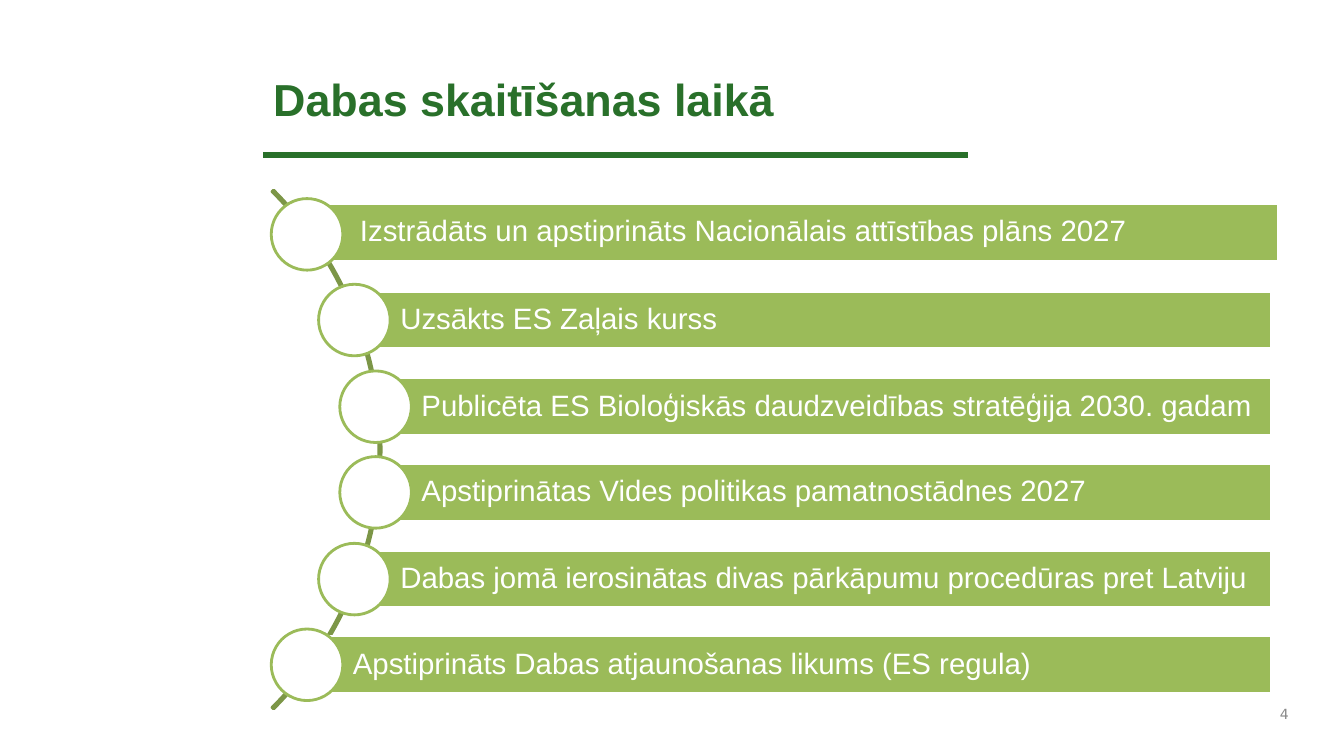
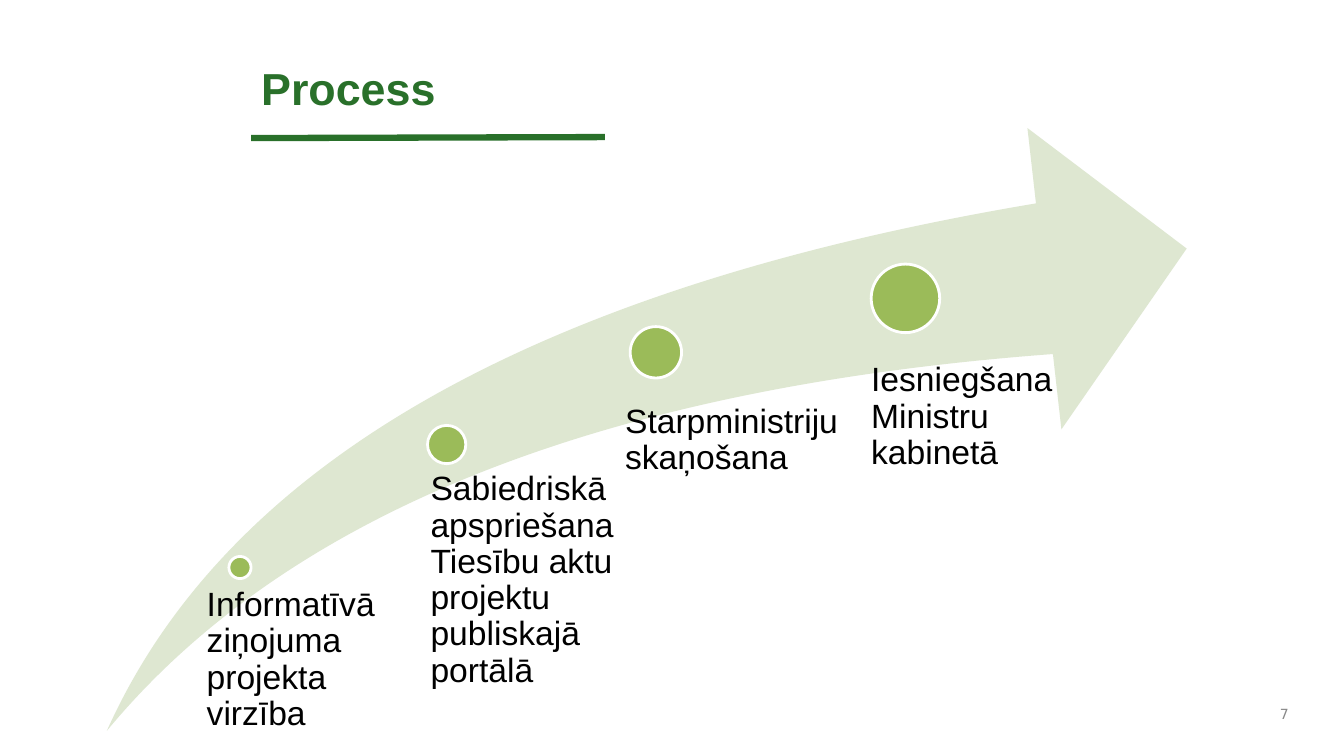
from dataclasses import dataclass
from typing import NamedTuple, Optional

from lxml import etree
from pptx import Presentation
from pptx import util as u
from pptx.dml.color import RGBColor
from pptx.enum import shapes, text
from pptx.oxml.ns import qn
from pptx.presentation import Presentation as Deck
from pptx.shapes.autoshape import Shape
from pptx.slide import Slide

PX = 9144  # EMU per px, 100 px to the inch
DARK_GREEN = "29702A"
GREEN = "9BBB59"
OLIVE = "7C9647"
PALE_GREEN = "DEE7D1"
WHITE = "FFFFFF"
BLACK = "000000"
GREY = "898989"
BODY_FONT = "Arial"
NUMBER_FONT = "DejaVu Sans"
OUTLINE = 2
TITLE_SIZE = (889, 113)
TITLE_ONLY = 5

CIRCLE = 71
CIRCLE_TOP = 197
CIRCLE_PITCH = 85.4
BAR_HEIGHT = 57
BAR_RIGHT = 1261


class Frame(NamedTuple):
    left: int
    top: int
    width: int
    height: int


class Insets(NamedTuple):
    left: int = 10
    top: int = 5
    right: int = 10
    bottom: int = 5


@dataclass(frozen=True)
class Step:
    label: str
    circle_left: int
    bar_shift: tuple[int, int] = (0, 0)


@dataclass(frozen=True)
class Stage:
    label: str
    dot_left: int
    dot_top: int
    dot_size: int
    label_frame: Frame


STEPS = [
    Step("Izstrādāts un apstiprināts Nacionālais attīstības plāns 2027", 269, (7, -2)),
    Step("Uzsākts ES Zaļais kurss", 316),
    Step("Publicēta ES Bioloģiskās daudzveidības stratēģija 2030. gadam", 337),
    Step("Apstiprinātas Vides politikas pamatnostādnes 2027", 337),
    Step("Dabas jomā ierosinātas divas pārkāpumu procedūras pret Latviju", 316),
    Step("Apstiprināts Dabas atjaunošanas likums (ES regula)", 269),
]

STAGES = [
    Stage("Informatīvā ziņojuma projekta virzība", 227, 552, 22, Frame(193, 583, 209, 142)),
    Stage("Sabiedriskā apspriešana Tiesību aktu projektu publiskajā portālā",
          424, 422, 38, Frame(407, 468, 259, 177)),
    Stage("Starpministriju skaņošana", 625, 324, 51, Frame(593, 401, 239, 150)),
    Stage("Iesniegšana Ministru kabinetā", 864, 262, 68, Frame(828, 360, 239, 89)),
]


def px(length: float) -> u.Emu:
    return u.Emu(round(length * PX))


def emu(frame: Frame) -> list[u.Emu]:
    return [px(length) for length in frame]


def color(value: str) -> RGBColor:
    return RGBColor.from_string(value)


def write(shape: Shape, content: str, *, size: int, ink: str, font: str = BODY_FONT,
          bold: bool = False, align: text.PP_ALIGN = text.PP_ALIGN.LEFT,
          anchor: text.MSO_ANCHOR = text.MSO_ANCHOR.MIDDLE,
          insets: Insets = Insets(), line_spacing: float = 1.0) -> None:
    frame = shape.text_frame
    frame.word_wrap = True
    frame.auto_size = text.MSO_AUTO_SIZE.NONE
    frame.vertical_anchor = anchor
    frame.margin_left, frame.margin_top, frame.margin_right, frame.margin_bottom = map(px, insets)
    paragraph = frame.paragraphs[0]
    paragraph.alignment = align
    paragraph.line_spacing = line_spacing
    run = paragraph.add_run()
    run.text = content
    run.font.name = font
    run.font.size = u.Pt(size)
    run.font.bold = bold
    run.font.color.rgb = color(ink)


def add_shape(slide: Slide, kind: shapes.MSO_SHAPE, frame: Frame, *,
              fill: Optional[str] = None, line: Optional[str] = None) -> Shape:
    shape = slide.shapes.add_shape(kind, *emu(frame))
    shape.shadow.inherit = False
    if fill:
        shape.fill.solid()
        shape.fill.fore_color.rgb = color(fill)
    else:
        shape.fill.background()
    if line:
        shape.line.color.rgb = color(line)
        shape.line.width = u.Pt(OUTLINE)
    else:
        shape.line.fill.background()
    return shape


def add_rule(slide: Slide, start: tuple[int, int], end: tuple[int, int]) -> None:
    """Draw the thick green line under a title."""
    rule = slide.shapes.add_connector(
        shapes.MSO_CONNECTOR.STRAIGHT, *[px(length) for length in (*start, *end)])
    rule.line.color.rgb = color(DARK_GREEN)
    rule.line.width = u.Pt(4.5)
    etree.SubElement(rule.element.spPr, qn("a:effectLst"))


def add_titled_slide(presentation: Deck, title: str, left: int, top: int, number: int) -> Slide:
    slide = presentation.slides.add_slide(presentation.slide_layouts[TITLE_ONLY])
    heading = slide.shapes.title
    heading.left, heading.top, heading.width, heading.height = emu(Frame(left, top, *TITLE_SIZE))
    write(heading, title, size=32, ink=DARK_GREEN, bold=True)
    number_box = slide.shapes.add_textbox(*emu(Frame(1244, 692, 44, 33)))
    write(number_box, str(number), size=10, ink=GREY, font=NUMBER_FONT,
          align=text.PP_ALIGN.RIGHT)
    return slide


def add_step(slide: Slide, step: Step, index: int) -> None:
    top = round(CIRCLE_TOP + index * CIRCLE_PITCH)
    left = step.circle_left + CIRCLE // 2 + 1
    shift_x, shift_y = step.bar_shift
    bar_frame = Frame(left + shift_x, top + (CIRCLE - BAR_HEIGHT) // 2 + shift_y,
                      BAR_RIGHT - left, BAR_HEIGHT)
    bar = add_shape(slide, shapes.MSO_SHAPE.RECTANGLE, bar_frame, fill=GREEN, line=WHITE)
    write(bar, step.label, size=21, ink=WHITE, insets=Insets(45, 6, 6, 6), line_spacing=0.9)
    add_shape(slide, shapes.MSO_SHAPE.OVAL, Frame(step.circle_left, top, CIRCLE, CIRCLE),
              fill=WHITE, line=GREEN)


def add_stage(slide: Slide, stage: Stage) -> None:
    dot_frame = Frame(stage.dot_left, stage.dot_top, stage.dot_size, stage.dot_size)
    add_shape(slide, shapes.MSO_SHAPE.OVAL, dot_frame, fill=GREEN, line=WHITE)
    label = slide.shapes.add_textbox(*emu(stage.label_frame))
    write(label, stage.label, size=24, ink=BLACK, anchor=text.MSO_ANCHOR.TOP,
          insets=Insets(round(stage.dot_size * 0.53), 0, 0, 0), line_spacing=0.9)


def build_events_slide(presentation: Deck) -> None:
    slide = add_titled_slide(presentation, "Dabas skaitīšanas laikā", 261, 41, 4)
    arc = add_shape(slide, shapes.MSO_SHAPE.BLOCK_ARC, Frame(-350, 82, 728, 728), line=OLIVE)
    for index, value in enumerate((189, 27, 0.003)):
        arc.adjustments[index] = value
    for index, step in enumerate(STEPS):
        add_step(slide, step, index)
    add_rule(slide, (261, 154), (960, 154))


def build_process_slide(presentation: Deck) -> None:
    slide = add_titled_slide(presentation, "Process", 249, 30, 7)
    arrow = add_shape(slide, shapes.MSO_SHAPE.SWOOSH_ARROW, Frame(106, 127, 1071, 598),
                      fill=PALE_GREEN)
    for index in range(2):
        arrow.adjustments[index] = 0.25
    for stage in STAGES:
        add_stage(slide, stage)
    add_rule(slide, (249, 137), (600, 136))


def main() -> None:
    presentation = Presentation()
    presentation.slide_width = px(1333)
    presentation.slide_height = px(750)
    build_events_slide(presentation)
    build_process_slide(presentation)
    presentation.save("out.pptx")


if __name__ == "__main__":
    main()
